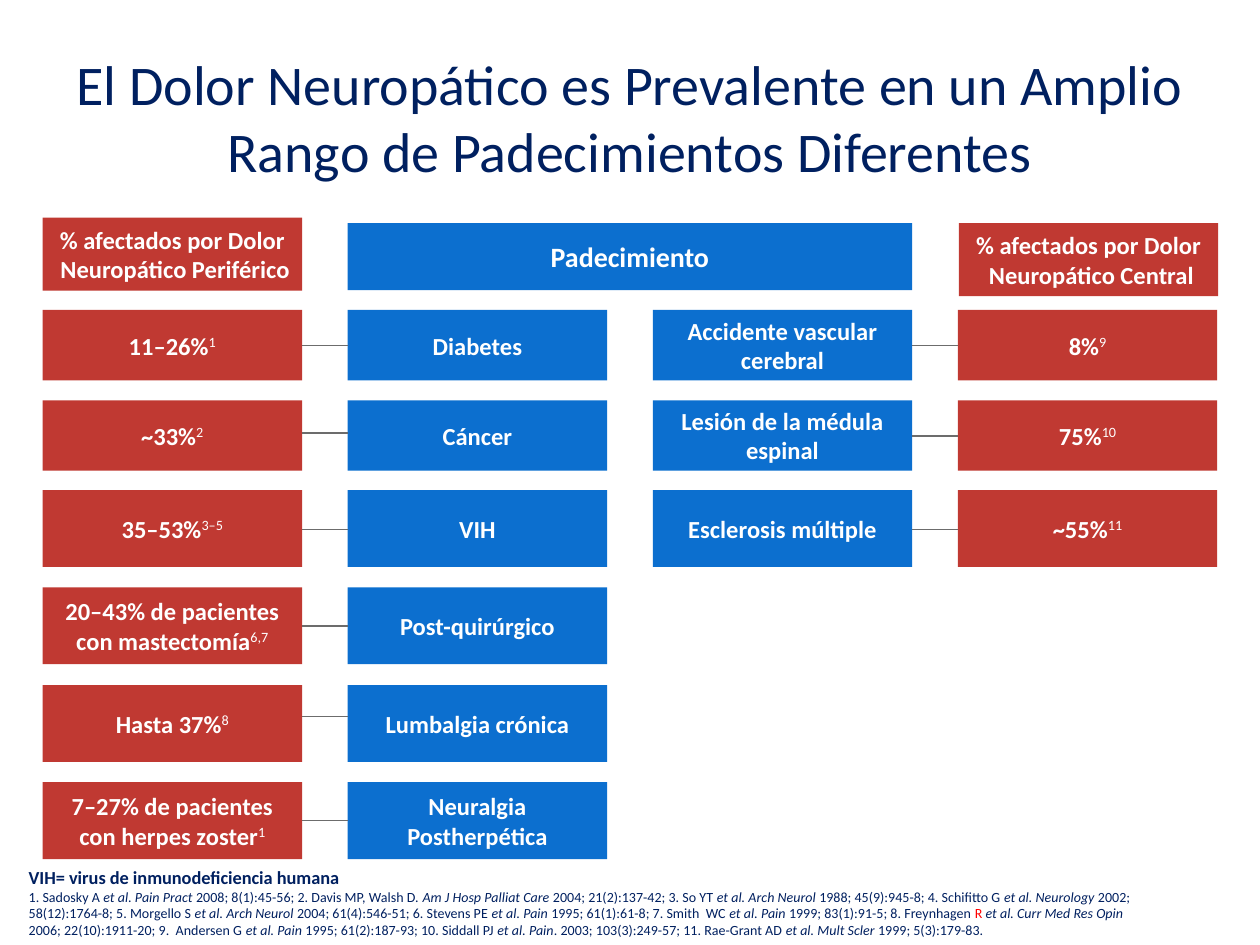
from lxml import etree
from pptx import Presentation
from pptx import util as u
from pptx.dml.color import RGBColor
from pptx.enum import shapes, text
from pptx.oxml.ns import qn

NAVY = RGBColor(0x00, 0x20, 0x60)
RED = RGBColor(0xC0, 0x39, 0x32)
BLUE = RGBColor(0x0C, 0x6F, 0xCF)
GRAY = RGBColor(0x6C, 0x6C, 0x6C)
WHITE = RGBColor(0xFF, 0xFF, 0xFF)
BRIGHT_RED = RGBColor(0xFF, 0x00, 0x00)

BOX_W = 5.23
COLS = [0.86 + 6.15 * i for i in range(4)]
ROWS = [(6.25, 1.42), (8.07, 1.42), (9.88, 1.55),
        (11.84, 1.55), (13.81, 1.55), (15.77, 1.55)]

PERIPHERAL = [
    ("11–26%", "1", "Diabetes", 6.96),
    ("~33%", "2", "Cáncer", 8.73),
    ("35–53%", "3–5", "VIH", 10.67),
    ("20–43% de pacientes con mastectomía", "6,7", "Post-quirúrgico", 12.62),
    ("Hasta 37%", "8", "Lumbalgia crónica", 14.45),
    ("7–27% de pacientes con herpes zoster", "1", "Neuralgia Postherpética", 16.54),
]
CENTRAL = [
    ("8%", "9", "Accidente vascular cerebral", 6.96),
    ("75%", "10", "Lesión de la médula espinal", 8.79),
    ("~55%", "11", "Esclerosis múltiple", 10.67),
]
REFERENCES = (
    "1. Sadosky A *et al. Pain Pract* 2008; 8(1):45-56; "
    "2. Davis MP, Walsh D. *Am J Hosp Palliat Care* 2004; 21(2):137-42; "
    "3. So YT *et al. Arch Neurol* 1988; 45(9):945-8; "
    "4. Schifitto G *et al. Neurology* 2002; 58(12):1764-8; "
    "5. Morgello S *et al. Arch Neurol* 2004; 61(4):546-51; "
    "6. Stevens PE *et al. Pain* 1995; 61(1):61-8; "
    "7. Smith  WC *et al. Pain* 1999; 83(1):91-5; "
    "8. Freynhagen **R *et al. Curr Med Res Opin* 2006; 22(10):1911-20; "
    "9.  Andersen G *et al. Pain* 1995; 61(2):187-93; "
    "10. Siddall PJ *et al. Pain*. 2003; 103(3):249-57; "
    "11. Rae-Grant AD *et al. Mult Scler* 1999; 5(3):179-83."
)


def add_run(p, content, size=14, color=WHITE, bold=False, italic=False, raised=False):
    r = p.add_run()
    r.text = content
    r.font.name = "Calibri"
    r.font.size = u.Pt(size)
    r.font.color.rgb = color
    r.font.bold = bold
    r.font.italic = italic
    if raised:
        r._r.get_or_add_rPr().set("baseline", "30000")


def add_box(content, x, y, w, h, fill, size=14, note="", wrap=True):
    sp = s.shapes.add_shape(shapes.MSO_SHAPE.RECTANGLE, u.Cm(x), u.Cm(y), u.Cm(w), u.Cm(h))
    sp.shadow.inherit = False
    sp.fill.solid()
    sp.fill.fore_color.rgb = fill
    sp.line.fill.background()
    tf = sp.text_frame
    tf.word_wrap = wrap
    tf.vertical_anchor = text.MSO_ANCHOR.MIDDLE
    for i, line in enumerate(content.split("\n")):
        p = tf.add_paragraph() if i else tf.paragraphs[0]
        p.alignment = text.PP_ALIGN.CENTER
        add_run(p, line, size=size, bold=True)
    if note:
        add_run(p, note, size=size, raised=True)


prs = Presentation()
prs.slide_width, prs.slide_height = u.Cm(25.4), u.Cm(19.05)
s = prs.slides.add_slide(prs.slide_layouts[6])

sp = s.shapes.add_textbox(u.Cm(1.27), u.Cm(0.76), u.Cm(22.86), u.Cm(3.18))
tf = sp.text_frame
tf.word_wrap = True
tf.vertical_anchor = text.MSO_ANCHOR.MIDDLE
p = tf.paragraphs[0]
p.alignment = text.PP_ALIGN.CENTER
add_run(p, "El Dolor Neuropático es Prevalente en un Amplio Rango de Padecimientos Diferentes",
        size=32, color=NAVY)

add_box("% afectados por Dolor\n Neuropático Periférico", COLS[0], 4.39, BOX_W, 1.47, RED, wrap=False)
add_box("Padecimiento", COLS[1], 4.5, 11.38, 1.35, BLUE, size=16, wrap=False)
add_box("% afectados por Dolor\n Neuropático Central", 19.33, 4.5, BOX_W, 1.47, RED, wrap=False)

for data, percent_col, condition_col in ((PERIPHERAL, 0, 1), (CENTRAL, 3, 2)):
    gap_x = COLS[min(percent_col, condition_col)] + BOX_W
    gap_end = COLS[max(percent_col, condition_col)]
    for (percent, note, condition, line_y), (y, h) in zip(data, ROWS):
        add_box(percent, COLS[percent_col], y, BOX_W, h, RED, note=note)
        add_box(condition, COLS[condition_col], y, BOX_W, h, BLUE)
        line = s.shapes.add_connector(shapes.MSO_CONNECTOR.STRAIGHT, u.Cm(gap_x), u.Cm(line_y),
                                      u.Cm(gap_end), u.Cm(line_y))
        line.line.color.rgb = GRAY
        line.line.width = u.Pt(0.75)
        etree.SubElement(line._element.spPr, qn("a:effectLst"))

sp = s.shapes.add_textbox(u.Cm(0.58), u.Cm(17.45), u.Cm(22.25), u.Cm(1.47))
tf = sp.text_frame
tf.word_wrap = True
tf.vertical_anchor = text.MSO_ANCHOR.BOTTOM
tf.margin_left = tf.margin_right = tf.margin_top = tf.margin_bottom = 0
add_run(tf.paragraphs[0], "VIH= virus de inmunodeficiencia humana", size=10.5, color=NAVY, bold=True)
p = tf.add_paragraph()
for i, piece in enumerate(REFERENCES.split("*")):
    if piece:
        add_run(p, piece, size=8, color=BRIGHT_RED if piece == "R " else NAVY, italic=i % 2 == 1)

prs.save("out.pptx")
